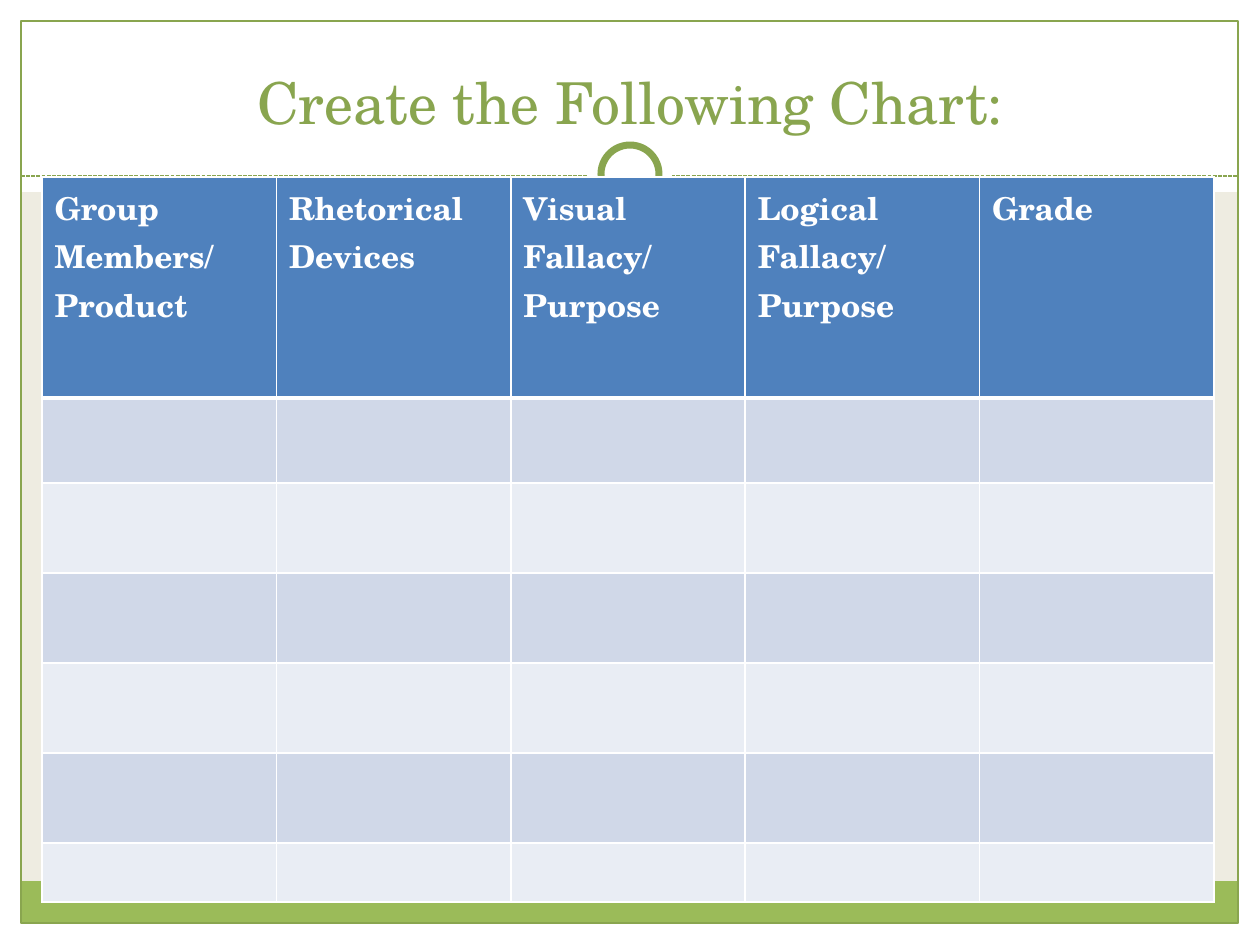
import pptx
import pptx.util
import pptx.dml.color
import pptx.enum.dml
import pptx.enum.shapes
import pptx.enum.text
import pptx.oxml
import pptx.oxml.ns

RGB = pptx.dml.color.RGBColor.from_string
KIND = pptx.enum.shapes.MSO_SHAPE
SCALE = 914400 / 126

theme = {
    "font": "TeX Gyre Schola",
    "white": "FFFFFF", "sand": "EEECE1", "lime": "9BBB59", "olive": "89A54F",
    "head": "4F81BD", "bands": ["D0D8E8", "E9EDF4"],
    "title": pptx.util.Pt(33), "label": pptx.util.Pt(18),
}


def px(num):
    return pptx.util.Emu(round(num * SCALE))


def style(run, form):
    run.font.color.rgb = RGB(form["color"])
    for key in ("name", "size", "bold"):
        setattr(run.font, key, form[key])


deck = pptx.Presentation()
deck.slide_width, deck.slide_height = px(1260), px(945)
slide = deck.slides.add_slide(deck.slide_layouts[5])
slide.background.fill.solid()
slide.background.fill.fore_color.rgb = RGB(theme["sand"])

white, lime, olive = theme["white"], theme["lime"], theme["olive"]
decor = [
    (KIND.RECTANGLE, (0, 924, 1260, 21), white, None),
    (KIND.RECTANGLE, (0, 0, 1260, 192), white, None),
    (KIND.RECTANGLE, (0, 0, 21, 945), white, None),
    (KIND.RECTANGLE, (1239, 0, 21, 945), white, None),
    (KIND.RECTANGLE, (21, 881, 1217, 43), lime, None),
    (KIND.RECTANGLE, (21, 21, 1217, 902), None, 0.75),
    (KIND.LINE_INVERSE, (21, 176, 1217, 0), None, 0.75),
    (KIND.OVAL, (588, 132, 84, 84), white, None),
    (KIND.OVAL, (601, 145, 58, 58), white, 4),
]
for kind, box, fill, width in decor:
    left, top, wide, high = map(px, box)
    if kind == KIND.LINE_INVERSE:
        item = slide.shapes.add_connector(
            pptx.enum.shapes.MSO_CONNECTOR.STRAIGHT, left, top, left + wide, top)
        item.line.dash_style = pptx.enum.dml.MSO_LINE.SQUARE_DOT
        pptx.oxml.ns.qn("a:effectLst")
        item._element.spPr.append(pptx.oxml.parse_xml(
            '<a:effectLst xmlns:a="http://schemas.openxmlformats.org/drawingml/2006/main"/>'))
    else:
        item = slide.shapes.add_shape(kind, left, top, wide, high)
        item.shadow.inherit = False
        if fill:
            item.fill.solid()
            item.fill.fore_color.rgb = RGB(fill)
        else:
            item.fill.background()
    if width:
        item.line.color.rgb = RGB(olive)
        item.line.width = pptx.util.Pt(width)
    else:
        item.line.fill.background()

title = slide.shapes.title
slide.shapes._spTree.append(title._element)
place = {"left": 42, "top": 32, "width": 1176, "height": 104}
for key, val in place.items():
    setattr(title, key, px(val))
frame = title.text_frame
frame.text = "Create the Following Chart:"
layout = {
    "vertical_anchor": pptx.enum.text.MSO_ANCHOR.BOTTOM,
    "auto_size": pptx.enum.text.MSO_AUTO_SIZE.NONE,
    "word_wrap": True,
    "margin_bottom": 0,
}
for key, val in layout.items():
    setattr(frame, key, val)
frame.paragraphs[0].alignment = pptx.enum.text.PP_ALIGN.CENTER
style(frame.paragraphs[0].runs[0], {
    "name": theme["font"], "size": theme["title"], "bold": False, "color": olive})

heads = ["Group Members/\nProduct", "Rhetorical Devices", "Visual Fallacy/\nPurpose",
         "Logical Fallacy/\nPurpose", "Grade"]
rows = [221, 85, 90, 90, 90, 90, 59]
wide = 1172
grid = slide.shapes.add_table(
    len(rows), len(heads), px(42), px(177), px(wide), px(sum(rows))).table
for col in grid.columns:
    col.width = px(wide / len(heads))
for num, high in enumerate(rows):
    grid.rows[num].height = px(high)
    for pos, text in enumerate(heads):
        cell = grid.cell(num, pos)
        cell.fill.solid()
        tint = theme["bands"][(num - 1) % 2] if num else theme["head"]
        cell.fill.fore_color.rgb = RGB(tint)
        if num == 0:
            cell.text = text
            for para in cell.text_frame.paragraphs:
                style(para.runs[0], {"name": theme["font"], "size": theme["label"],
                                     "bold": True, "color": white})
        props = cell._tc.get_or_add_tcPr()
        for spot, side in enumerate("LRTB"):
            thick = 3 if (num, side) in ((0, "B"), (1, "T")) else 1
            props.insert(spot, pptx.oxml.parse_xml(
                f'<a:ln{side} xmlns:a="http://schemas.openxmlformats.org/drawingml/2006/main"'
                f' w="{pptx.util.Pt(thick)}"><a:solidFill><a:srgbClr val="{white}"/>'
                f'</a:solidFill></a:ln{side}>'))

deck.save("out.pptx")
